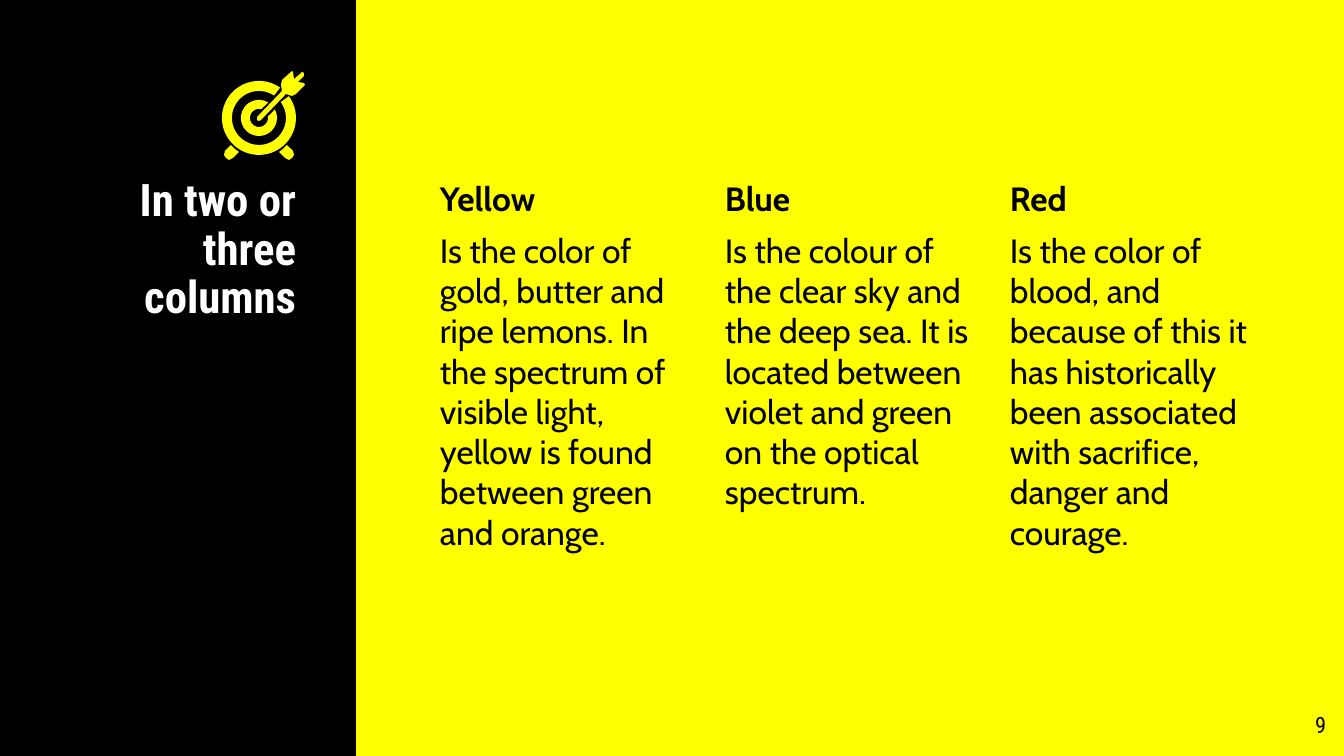
from math import cos, radians, sin

from pptx import Presentation
from pptx.dml.color import RGBColor
from pptx.enum.shapes import MSO_SHAPE
from pptx.enum.text import PP_ALIGN
from pptx.util import Pt

RECT = MSO_SHAPE.RECTANGLE
LEFT, RIGHT = PP_ALIGN.LEFT, PP_ALIGN.RIGHT
PX = 914400 / 134.4
COLORS = {"yellow": "FFFF00", "black": "000000", "white": "FFFFFF"}
HEAD_FONT, BODY_FONT = "Roboto Condensed", "Cabin"

# Content
TITLE = "In two or three columns"
COLUMNS = [
    ("Yellow", "Is the color of gold, butter and ripe lemons. In the spectrum of "
               "visible light, yellow is found between green and orange."),
    ("Blue", "Is the colour of the clear sky and the deep sea. It is located "
             "between violet and green on the optical spectrum."),
    ("Red", "Is the color of blood, and because of this it has historically been "
            "associated with sacrifice, danger and courage."),
]
PAGE = "9"

# Target icon: rings as (outer radius, gap angles), (inner radius, gap angles)
CENTER_X, CENTER_Y = 259, 118
RINGS = [((37, 36, 55), (27, 36, 56)), ((18, 28, 59), (9, 9, 76))]
FOOT = [(231, 145), (225, 151), (224, 155), (226, 158), (229, 160), (233, 158),
        (239, 152), (235, 149)]
ARROW = [(292, 71), (282, 80), (281, 85), (282, 91), (257, 117), (257, 120),
         (259, 121), (261, 120), (286, 94), (292, 96), (296, 94), (305, 85),
         (304, 83), (298, 82), (304, 76), (304, 73), (302, 72), (300, 74),
         (294, 79), (293, 72)]


def px(n):
    return round(n * PX)


def color(name):
    return RGBColor.from_string(COLORS[name])


def paint(sp, name):
    sp.shadow.inherit = False
    sp.fill.solid()
    sp.fill.fore_color.rgb = color(name)
    sp.line.fill.background()


def add_text(s, box, lines, font, size, name, align=LEFT, bold_first=False,
             before=0, spacing=None):
    tf = s.shapes.add_textbox(*map(px, box)).text_frame
    tf.word_wrap = True
    tf.margin_left = tf.margin_right = tf.margin_top = tf.margin_bottom = px(13)
    for i, line in enumerate(lines):
        p = tf.paragraphs[0] if i == 0 else tf.add_paragraph()
        p.text = line
        p.alignment = align
        p.space_before = Pt(before)
        if spacing:
            p.line_spacing = spacing
        p.font.name, p.font.size = font, Pt(size)
        p.font.bold = bold_first and i == 0
        p.font.color.rgb = color(name)


def add_outline(s, points, name):
    start, *rest = [(px(x), px(y)) for x, y in points]
    builder = s.shapes.build_freeform(*start)
    builder.add_line_segments(rest, close=True)
    paint(builder.convert_to_shape(), name)


def arc(radius, gap_start, gap_end, steps=60):
    """Points anticlockwise around the target, leaving the gap open."""
    sweep = 360 - (gap_end - gap_start)
    angles = [radians(gap_end + sweep * i / steps) for i in range(steps + 1)]
    return [(CENTER_X + radius * cos(a), CENTER_Y - radius * sin(a)) for a in angles]


prs = Presentation()
prs.slide_width, prs.slide_height = px(1344), px(756)
s = prs.slides.add_slide(prs.slide_layouts[6])
s.background.fill.solid()
s.background.fill.fore_color.rgb = color("yellow")

# Side panel and title
panel = s.shapes.add_shape(RECT, 0, 0, px(356), px(756))
paint(panel, "black")
add_text(s, (59, 165, 250, 218), [TITLE], HEAD_FONT, 24, "white", RIGHT,
         bold_first=True, spacing=0.9)

# Columns
for i, column in enumerate(COLUMNS):
    add_text(s, (427 + 285 * i, 165, 272, 558), column, BODY_FONT, 18, "black",
             bold_first=True, before=6)

# Target icon
for outer, inner in RINGS:
    add_outline(s, arc(*outer) + arc(*inner)[::-1], "yellow")
mirrored_foot = [(2 * CENTER_X - x, y) for x, y in FOOT]
for points in (FOOT, mirrored_foot, ARROW):
    add_outline(s, points, "yellow")

# Page number
add_text(s, (1258, 698, 81, 58), [PAGE], HEAD_FONT, 12, "black", RIGHT)

prs.save("out.pptx")
